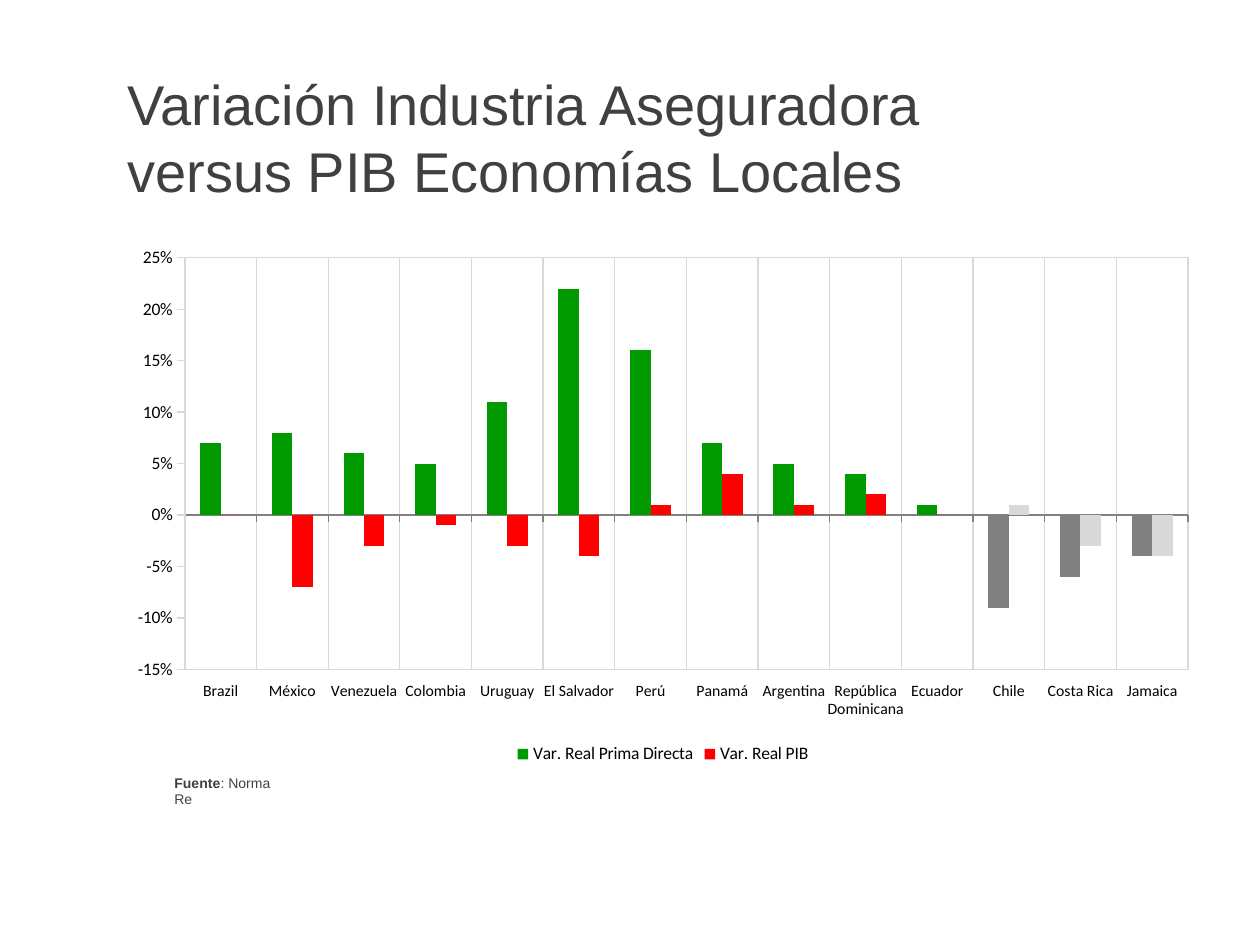
from lxml import etree
from pptx import Presentation
from pptx.chart.data import CategoryChartData
from pptx.dml.color import RGBColor
from pptx.enum.chart import XL_CHART_TYPE as Kind
from pptx.enum.chart import XL_LEGEND_POSITION as Spot
from pptx.enum.chart import XL_TICK_LABEL_POSITION as Label
from pptx.enum.chart import XL_TICK_MARK as Tick
from pptx.enum.text import MSO_ANCHOR as Anchor
from pptx.oxml import parse_xml
from pptx.oxml.ns import nsdecls, qn
from pptx.util import Pt

PX = 914400 // 126
NAMES = ["Brazil", "México", "Venezuela", "Colombia", "Uruguay", "El Salvador",
         "Perú", "Panamá", "Argentina", "República\nDominicana", "Ecuador",
         "Chile", "Costa Rica", "Jamaica"]
GROWTH = [
    ("Var. Real Prima Directa", "009900", "808080",
     [0.07, 0.08, 0.06, 0.05, 0.11, 0.22, 0.16,
      0.07, 0.05, 0.04, 0.01, -0.09, -0.06, -0.04]),
    ("Var. Real PIB", "FF0000", "D9D9D9",
     [0, -0.07, -0.03, -0.01, -0.03, -0.04, 0.01,
      0.04, 0.01, 0.02, 0, 0.01, -0.03, -0.04]),
]
MUTED = range(11, 14)


def tint(code):
    """Turn a hex string into a colour."""
    return RGBColor.from_string(code)


def paint(fill, code):
    """Give a fill one solid colour."""
    fill.solid()
    fill.fore_color.rgb = tint(code)


def stroke(line, code, size=0.75):
    """Give a line its colour and width."""
    line.color.rgb = tint(code)
    line.width = Pt(size)


class Page:
    """Hold the style and the current slide."""

    face, ink, grid = "Arial", "404040", "D9D9D9"

    def __init__(self, deck):
        """Add a blank slide to the deck."""
        self.slide = deck.slides.add_slide(deck.slide_layouts[6])

    def text(self, box, rows, size, wrap=True, anchor=Anchor.TOP):
        """Write rows of (words, bold) runs in a text box."""
        frame = self.slide.shapes.add_textbox(*(n * PX for n in box)).text_frame
        frame.word_wrap = wrap
        frame.vertical_anchor = anchor
        if anchor == Anchor.BOTTOM:
            frame.margin_bottom = 0
        for i, row in enumerate(rows):
            para = frame.paragraphs[0] if i == 0 else frame.add_paragraph()
            for words, bold in row:
                run = para.add_run()
                run.text = words
                font = run.font
                font.name, font.size, font.bold = self.face, Pt(size), bold
                font.color.rgb = tint(self.ink)

    def chart(self, box, names, sets):
        """Draw clustered columns with muted colours for the last points."""
        data = CategoryChartData(number_format="0%")
        data.categories = names
        for name, _, _, vals in sets:
            data.add_series(name, vals)
        chart = self.slide.shapes.add_chart(
            Kind.COLUMN_CLUSTERED, *(n * PX for n in box), data).chart
        chart.has_title = False
        chart.font.name, chart.font.size = "Calibri", Pt(10)
        chart.font.color.rgb = tint("000000")
        chart.has_legend = True
        chart.legend.position = Spot.BOTTOM
        chart.legend.include_in_layout = False
        plot = chart.plots[0]
        plot.gap_width, plot.overlap, plot.vary_by_categories = 150, 0, False
        for bars, (_, main, dull, _) in zip(plot.series, sets):
            bars.invert_if_negative = False
            paint(bars.format.fill, main)
            for i in MUTED:
                paint(bars.points[i].format.fill, dull)
        self.axes(chart)
        self.frame(chart)

    def axes(self, chart):
        """Style both axes."""
        cat, val = chart.category_axis, chart.value_axis
        cat.tick_label_position = Label.LOW
        cat.major_tick_mark = val.major_tick_mark = Tick.OUTSIDE
        cat.tick_labels.font.size = Pt(9)
        cat.has_major_gridlines = True
        stroke(cat.major_gridlines.format.line, self.grid)
        stroke(cat.format.line, "808080")
        val.minimum_scale, val.maximum_scale, val.major_unit = -0.15, 0.25, 0.05
        val.has_major_gridlines = False
        val.tick_labels.number_format = "0%"
        val.tick_labels.number_format_is_linked = False
        stroke(val.format.line, self.grid)

    def frame(self, chart):
        """Place the plot area and outline it."""
        area = chart.plots[0]._element.getparent()
        for old in area.findall(qn("c:layout")):
            area.remove(old)
        spot = parse_xml(f"<c:layout {nsdecls('c')}><c:manualLayout/></c:layout>")
        for tag, val in [("layoutTarget", "inner"), ("xMode", "edge"),
                         ("yMode", "edge"), ("x", "0.063"), ("y", "0.039"),
                         ("w", "0.917"), ("h", "0.774")]:
            etree.SubElement(spot[0], qn("c:" + tag)).set("val", val)
        area.insert(0, spot)
        area.append(parse_xml(
            f"<c:spPr {nsdecls('c', 'a')}><a:noFill/><a:ln w='9525'><a:solidFill>"
            f"<a:srgbClr val='{self.grid}'/></a:solidFill></a:ln></c:spPr>"))


def main():
    """Build and save the slide."""
    deck = Presentation()
    deck.slide_width, deck.slide_height = 1260 * PX, 945 * PX
    page = Page(deck)
    page.text((115, 63, 861, 141),
              [[("Variación Industria Aseguradora", False)],
               [("versus PIB Economías Locales", False)]],
              32, anchor=Anchor.BOTTOM)
    page.text((162, 768, 142, 30),
              [[("Fuente", True), (": Norma Re", False)]], 8, wrap=False)
    page.chart((116, 237, 1094, 532), NAMES, GROWTH)
    deck.save("out.pptx")


if __name__ == "__main__":
    main()
